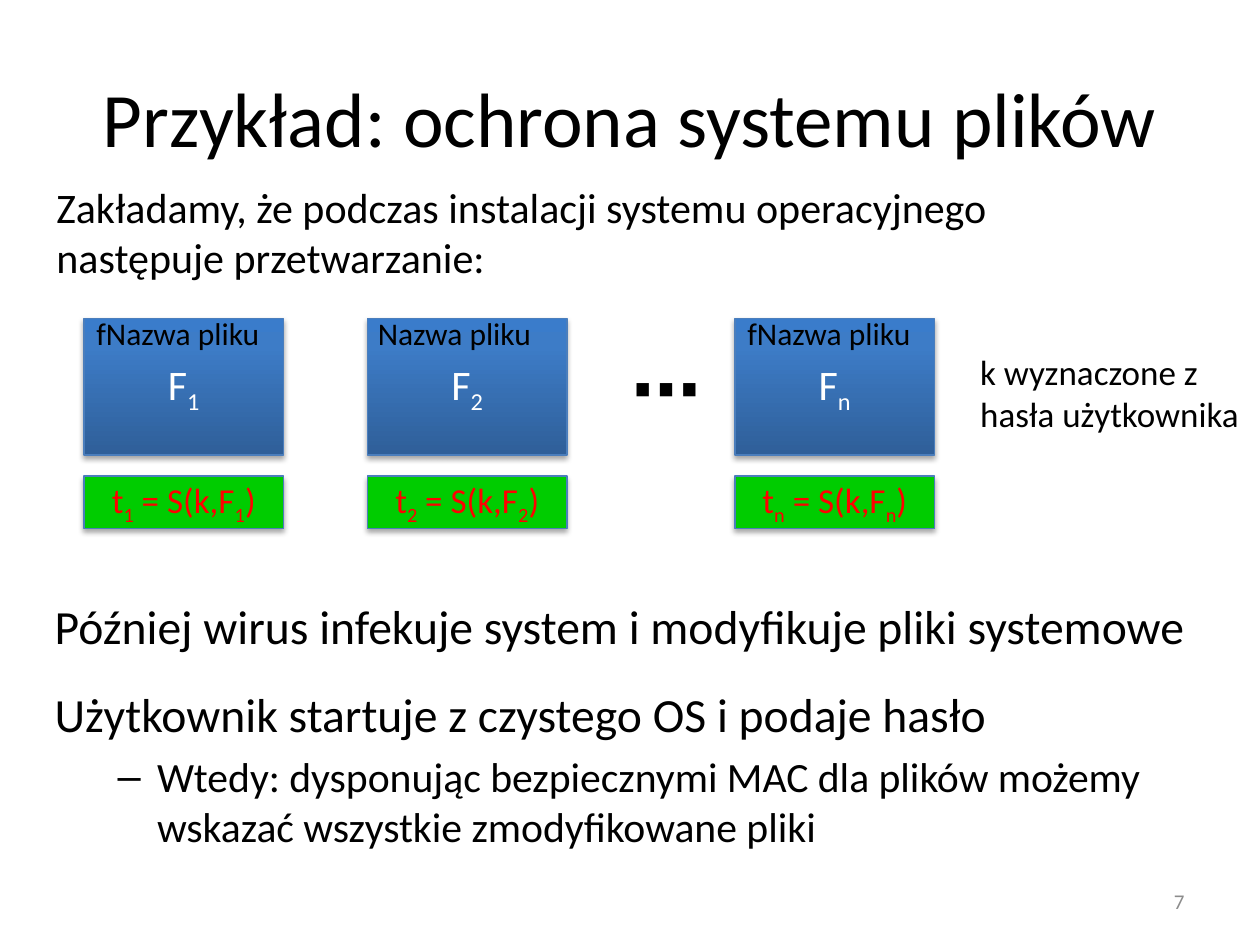
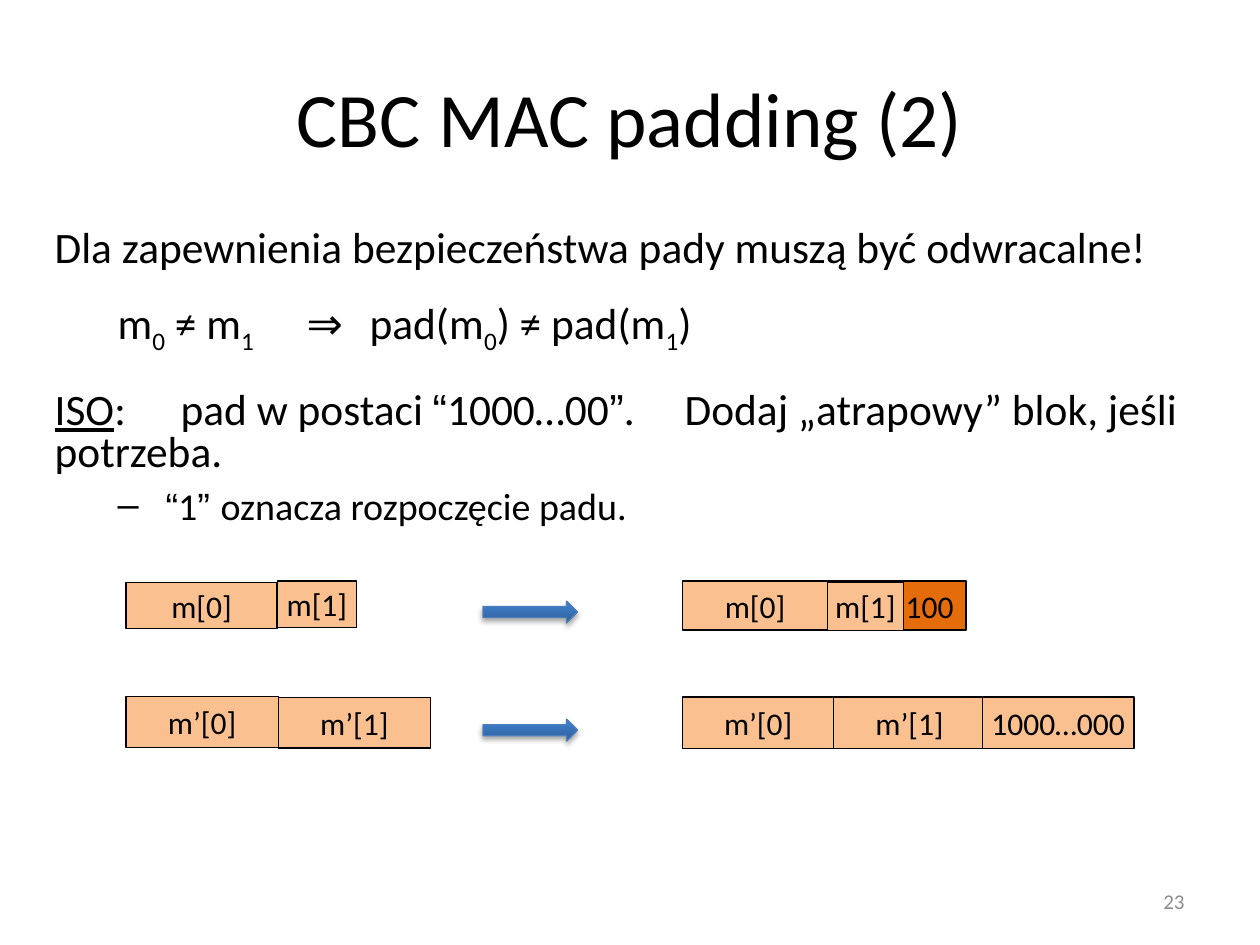
import copy

import pptx
import pptx.dml.color
import pptx.enum.dml
import pptx.enum.shapes
import pptx.enum.text
import pptx.oxml
import pptx.oxml.ns
import pptx.util

Pt = pptx.util.Pt
RGB = pptx.dml.color.RGBColor.from_string
SHAPE = pptx.enum.shapes.MSO_SHAPE
ALIGN = pptx.enum.text.PP_ALIGN
MIDDLE = pptx.enum.text.MSO_ANCHOR.MIDDLE
AUTO_SIZE = pptx.enum.text.MSO_AUTO_SIZE
qn = pptx.oxml.ns.qn
NAMESPACE = pptx.oxml.ns.nsdecls("a")

COLORS = {
    "text": "000000", "number": "8C8C8C", "white": "FFFFFF",
    "blue_dark": "2F5F99", "blue": "3D7CC7", "blue_light": "3A7CCB",
    "blue_line": "4B7EBC", "green": "00CC00", "red": "FF0000",
    "peach": "FAC090", "orange": "E46C0A",
}
SHADOW = (
    f'<a:effectLst {NAMESPACE}><a:outerShdw blurRad="39370" dist="22860" dir="5400000" '
    'rotWithShape="0"><a:srgbClr val="000000"><a:alpha val="35000"/></a:srgbClr>'
    '</a:outerShdw></a:effectLst>'
)


def add_runs(paragraph, text, size, color="text", **extra):
    """Write text; pieces between bars are subscripts, line feeds are breaks."""
    font_values = {"name": "Calibri", "size": Pt(size), **extra}
    for line_index, line in enumerate(text.split("\n")):
        if line_index:
            paragraph.add_line_break()
        for piece_index, piece in enumerate(line.split("|")):
            if not piece:
                continue
            run = paragraph.add_run()
            run.text = piece
            for name, value in font_values.items():
                setattr(run.font, name, value)
            run.font.color.rgb = RGB(COLORS[color])
            if piece_index % 2:
                run.font._element.set("baseline", "-25000")


def add_block(slide, kind, place, fill, line, shaded=False):
    """Add a filled preset shape; fill None gives the blue gradient."""
    shape = slide.shapes.add_shape(kind, *map(Pt, place))
    shape.shadow.inherit = False
    if fill:
        shape.fill.solid()
        shape.fill.fore_color.rgb = RGB(COLORS[fill])
    else:
        shape.fill.gradient()
        shape.fill.gradient_angle = 90
        stop_list = shape._element.spPr.find(qn("a:gradFill")).find(qn("a:gsLst"))
        while len(stop_list) < 3:
            stop_list.append(copy.deepcopy(stop_list[-1]))
        stop_values = ((0, "blue_dark"), (0.8, "blue"), (1, "blue_light"))
        for stop, (position, color) in zip(shape.fill.gradient_stops, stop_values):
            stop.position = position
            stop.color.rgb = RGB(COLORS[color])
    shape.line.color.rgb = RGB(COLORS[line])
    shape.line.width = Pt(0.75)
    if shaded:
        properties = shape._element.spPr
        properties.replace(properties.find(qn("a:effectLst")), pptx.oxml.parse_xml(SHADOW))
    shape.text_frame.vertical_anchor = MIDDLE
    shape.text_frame.paragraphs[0].alignment = ALIGN.CENTER
    return shape


presentation = pptx.Presentation()
presentation.slide_width = Pt(720)
presentation.slide_height = Pt(540)

# Body paragraphs: level, spacing before, size, tab stops, runs
file_body = [
    (0, 0, 27.2, [], [("Później wirus infekuje system i modyfikuje pliki systemowe", {})]),
    (0, 17.8, 27.2, [], [("Użytkownik startuje z czystego OS i podaje hasło", {})]),
    (1, 4.8, 23.8, [], [("Wtedy: dysponując bezpiecznymi MAC dla plików możemy "
                         "wskazać wszystkie zmodyfikowane pliki", {})]),
]
quote = {"name": "Arial"}
padding_body = [
    (0, 0, 24.8, [], [("Dla zapewnienia bezpieczeństwa pady muszą być odwracalne!", {})]),
    (0, 17, 24.8, [144, 251, 299],
     [("\tm|0| ≠ m|1|\t⇒\tpad(m|0|) ≠ pad(m|1|)", {})]),
    (0, 24.8, 24.8, [72, 228, 366],
     [("ISO", {"underline": True}), (":\tpad w postaci\t", {}), ("“", quote),
      ("1000…00", {}), ("”", quote), (".\tDodaj „atrapowy” blok, jeśli potrzeba.", {})]),
    (1, 8.7, 21.7, [],
     [(" ", {}), ("“", quote), ("1", {}), ("” ", quote), ("oznacza rozpoczęcie padu.", {})]),
]

# Title, body and page number of both slides
pages = [
    ("Przykład: ochrona systemu plików", "7", (24, 337.5, 666, 130.5), 1, file_body),
    ("CBC MAC padding (2)", "23", (24, 128, 684, 198), 0.8, padding_body),
]
for title_text, number, body_place, line_spacing, body_paragraphs in pages:
    slide = presentation.slides.add_slide(presentation.slide_layouts[1])
    title, body = slide.placeholders
    title_frame = title.text_frame
    title_frame.vertical_anchor = MIDDLE
    title_frame.paragraphs[0].alignment = ALIGN.CENTER
    add_runs(title_frame.paragraphs[0], title_text, 44)

    body.left, body.top, body.width, body.height = map(Pt, body_place)
    body.text_frame.auto_size = AUTO_SIZE.NONE
    for index, (level, before, size, tabs, runs) in enumerate(body_paragraphs):
        paragraph = body.text_frame.add_paragraph() if index else body.text_frame.paragraphs[0]
        paragraph_values = {"level": level, "space_before": Pt(before),
                            "line_spacing": line_spacing}
        for name, value in paragraph_values.items():
            setattr(paragraph, name, value)
        properties = paragraph._p.get_or_add_pPr()
        if level == 0:
            properties.set("marL", "0")
            properties.set("indent", "0")
            properties.append(pptx.oxml.parse_xml(f"<a:buNone {NAMESPACE}/>"))
        if tabs:
            stops = "".join(f'<a:tab pos="{Pt(tab)}" algn="l"/>' for tab in tabs)
            properties.append(pptx.oxml.parse_xml(f"<a:tabLst {NAMESPACE}>{stops}</a:tabLst>"))
        for text, extra in runs:
            add_runs(paragraph, text, size, **extra)

    number_box = slide.shapes.add_textbox(Pt(516), Pt(500.5), Pt(168), Pt(28.75))
    number_box.text_frame.word_wrap = True
    number_box.text_frame.vertical_anchor = MIDDLE
    number_box.text_frame.paragraphs[0].alignment = ALIGN.RIGHT
    add_runs(number_box.text_frame.paragraphs[0], number, 12, "number")

file_slide, padding_slide = presentation.slides

# Files with their tags
for index, left in (("1", 48), ("2", 210), ("n", 420)):
    file_block = add_block(file_slide, SHAPE.RECTANGLE, (left, 182, 114, 78),
                           None, "blue_line", True)
    add_runs(file_block.text_frame.paragraphs[0], f"F|{index}|", 24, "white")
    tag = add_block(file_slide, SHAPE.RECTANGLE, (left, 272, 114, 30),
                    "green", "blue_line", True)
    add_runs(tag.text_frame.paragraphs[0], f"t|{index}| = S(k,F|{index}|)", 20, "red")

# Free labels around the files
labels = [
    ("Zakładamy, że podczas instalacji systemu operacyjnego\nnastępuje przetwarzanie:",
     (25.2, 100, 551.5, 65.5), 24, False),
    ("⋯", (354, 193.5, 34.5, 55.5), 40, True),
    ("k wyznaczone z\nhasła użytkownika", (553, 196.5, 164, 55.5), 20, False),
    ("fNazwa pliku", (48, 175.75, 108.7, 29), 18, False),
    ("Nazwa pliku", (208.8, 175.75, 103, 29), 18, False),
    ("fNazwa pliku", (420, 175.75, 108.7, 29), 18, False),
]
for text, place, size, bold in labels:
    label = file_slide.shapes.add_textbox(*map(Pt, place))
    label.text_frame.word_wrap = False
    label.text_frame.auto_size = AUTO_SIZE.SHAPE_TO_FIT_TEXT
    add_runs(label.text_frame.paragraphs[0], text, size, bold=bold)

# Message blocks before and after padding
message_blocks = [
    ("m[0]", (72, 332.7, 86.4, 26.6)),
    ("m[1]", (158.4, 332, 45.4, 26.6)),
    ("m[0]", (390, 332, 83, 28)),
    ("100", (473, 332, 79, 28)),
    ("m[1]", (473, 332.7, 43.2, 27.5)),
    ("m’[0]", (72, 398.2, 87, 28.8)),
    ("m’[1]", (159, 398.7, 87, 28.8)),
    ("m’[0]", (390, 398.2, 86.5, 29.5)),
    ("m’[1]", (476.5, 398.2, 86.5, 29.5)),
    ("1000…000", (561.5, 398.2, 86.5, 29.5)),
]
for text, place in message_blocks:
    short_pad = text == "100"
    block = add_block(padding_slide, SHAPE.RECTANGLE, place,
                      "orange" if short_pad else "peach", "text")
    block.text_frame.word_wrap = False
    if short_pad:
        block.text_frame.paragraphs[0].alignment = ALIGN.RIGHT
    add_runs(block.text_frame.paragraphs[0], text, 18)

for top in (343.5, 411):
    add_block(padding_slide, SHAPE.RIGHT_ARROW, (276, top, 54, 12.5), None, "blue_line", True)

presentation.save("out.pptx")
